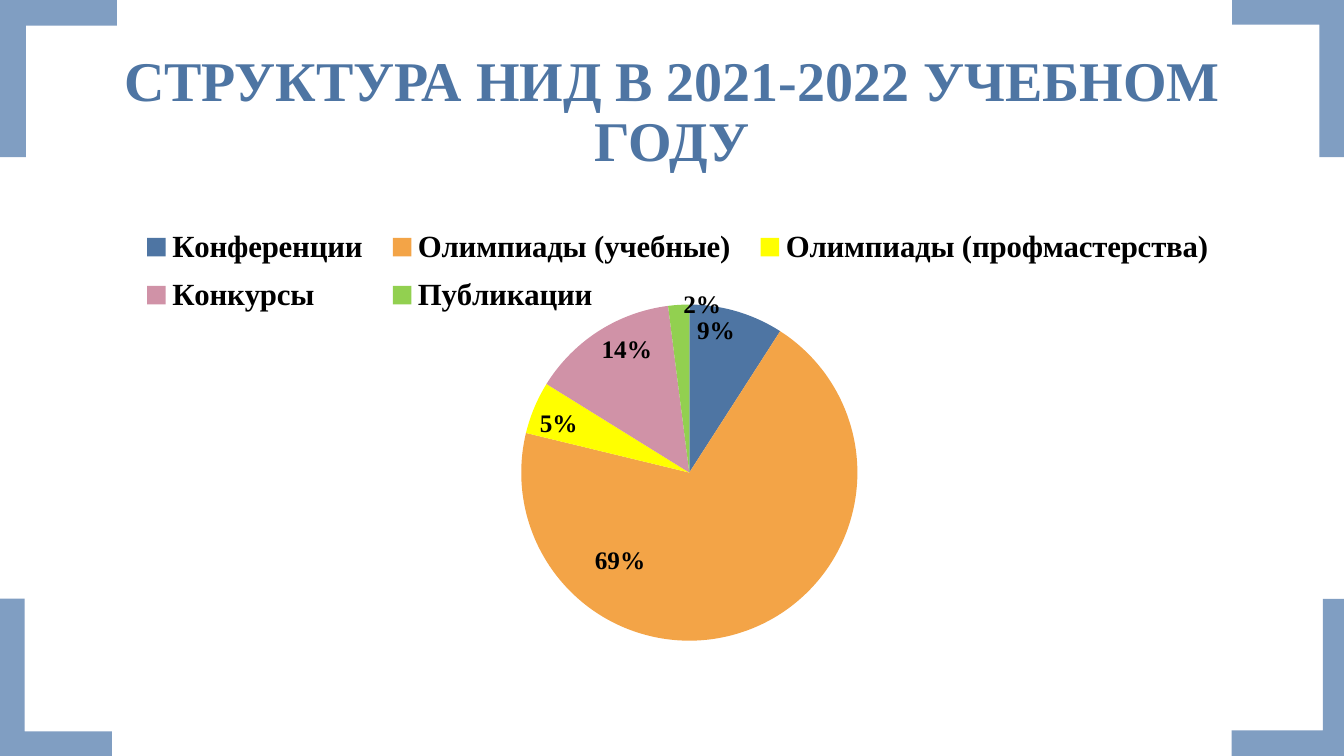
from lxml import etree
from pptx import Presentation
from pptx.chart.data import CategoryChartData
from pptx.dml.color import RGBColor
from pptx.enum.chart import XL_CHART_TYPE as ChartType, XL_LABEL_POSITION as LabelPos
from pptx.enum.chart import XL_LEGEND_POSITION as LegendPos
from pptx.enum.shapes import MSO_SHAPE as Shape
from pptx.enum.text import MSO_ANCHOR as Anchor, PP_ALIGN as Align
from pptx.oxml import parse_xml
from pptx.oxml.ns import nsdecls, qn
from pptx.util import Pt

SERIF = "Times New Roman"
BLUE, FRAME, BLACK = "4E75A3", "809EC2", "000000"
PERCENT = '0"%"'


def style_font(font, size, color):
    font.name, font.size, font.bold = SERIF, Pt(size), True
    font.color.rgb = RGBColor.from_string(color)


def layout_xml(**values):
    """Return a manual chart layout; names are c:manualLayout children in order."""
    items = "".join(f'<c:{name} val="{value}"/>' for name, value in values.items())
    return parse_xml(f'<c:layout {nsdecls("c")}><c:manualLayout>{items}</c:manualLayout></c:layout>')


deck = Presentation()
deck.slide_width, deck.slide_height = Pt(960), Pt(540)
page = deck.slides.add_slide(deck.slide_layouts[5])

# Corner frame: left, top, width, height, rotation
corners = [
    (0, 427.7, 80, 112.3, 0),
    (880, 0, 80, 112.3, 180),
    (865.4, 442.1, 112.3, 83.5, 270),
    (-14.4, 14.4, 112.3, 83.5, 90),
]
for left, top, width, height, rotation in corners:
    corner = page.shapes.add_shape(Shape.CORNER, Pt(left), Pt(top), Pt(width), Pt(height))
    corner.rotation = rotation
    corner.adjustments[0], corner.adjustments[1] = 0.22, 0.22
    corner.shadow.inherit = False
    corner.fill.solid()
    corner.fill.fore_color.rgb = RGBColor.from_string(FRAME)
    corner.line.fill.background()

# Title
title = page.shapes.title
title.left, title.top, title.width, title.height = Pt(66), Pt(28.8), Pt(828), Pt(104.4)
title.text_frame.vertical_anchor = Anchor.MIDDLE
title.text_frame.word_wrap = True
para = title.text_frame.paragraphs[0]
para.alignment, para.line_spacing = Align.CENTER, 0.9
span = para.add_run()
span.text = "СТРУКТУРА НИД В 2021-2022 УЧЕБНОМ ГОДУ"
style_font(span.font, 40, BLUE)
span.font._element.insert(0, parse_xml(
    f'<a:ln {nsdecls("a")} w="{Pt(2.48)}"><a:solidFill><a:srgbClr val="{BLUE}"/></a:solidFill></a:ln>'))

# Pie chart
slices = [
    ("Конференции", 9, BLUE),
    ("Олимпиады (учебные)", 69, "F3A447"),
    ("Олимпиады (профмастерства)", 5, "FFFF00"),
    ("Конкурсы", 14, "D092A7"),
    ("Публикации", 2, "92D050"),
]
data = CategoryChartData()
data.categories = [name for name, _, _ in slices]
data.add_series("Series 1", [value for _, value, _ in slices])
chart = page.shapes.add_chart(
    ChartType.PIE, Pt(66), Pt(144), Pt(828), Pt(342.7), data).chart
chart.has_title = False
chart.font.name, chart.font.size = "Calibri", Pt(18)
chart.font.color.rgb = RGBColor.from_string(BLACK)

chart.has_legend = True
legend = chart.legend
legend.position = LegendPos.TOP
legend.include_in_layout = False
style_font(legend.font, 22, BLACK)
for old in legend._element.findall(qn("c:layout")):
    legend._element.remove(old)
legend._element.find(qn("c:legendPos")).addnext(
    layout_xml(xMode="edge", yMode="edge", x=0.03, y=0.03, w=0.95, h=0.23))

plot_area = chart._chartSpace.chart.plotArea
for old in plot_area.findall(qn("c:layout")):
    plot_area.remove(old)
plot_area.insert(0, layout_xml(
    layoutTarget="inner", xMode="edge", yMode="edge", x=0.37, y=0.21, w=0.29, h=0.71))

plot = chart.plots[0]
plot.vary_by_categories = True
series = plot.series[0]
for index, (_, _, color) in enumerate(slices):
    fill = series.points[index].format.fill
    fill.solid()
    fill.fore_color.rgb = RGBColor.from_string(color)

labels = series.data_labels
labels.show_value = True
labels.number_format, labels.number_format_is_linked = PERCENT, False
labels.position = LabelPos.INSIDE_END
style_font(labels.font, 18, BLACK)

# Labels moved away from their default place: slice index, shift right, shift down
for index, right, down in [(1, -0.09, -0.1), (4, 0.02, -0.04)]:
    label = series.points[index].data_label
    style_font(label.font, 18, BLACK)
    label.position = LabelPos.INSIDE_END
    element = labels._element.xpath(f'c:dLbl[c:idx/@val="{index}"]')[0]
    shift = layout_xml(x=right, y=down)
    element.find(qn("c:idx")).addnext(shift)
    number_format = etree.Element(qn("c:numFmt"), formatCode=PERCENT, sourceLinked="0")
    shift.addnext(number_format)

deck.save("out.pptx")
